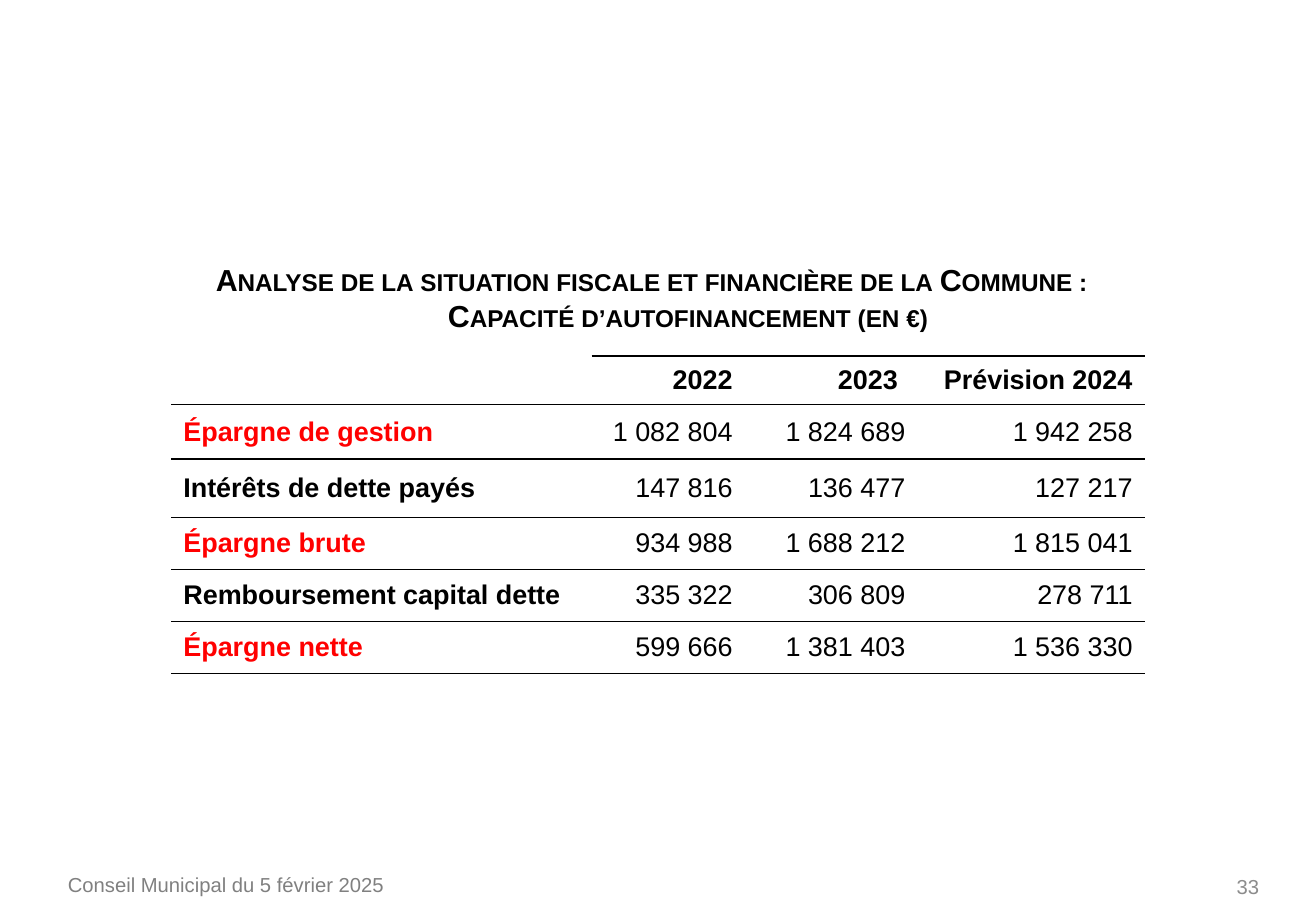
from lxml.etree import SubElement
from pptx import Presentation
from pptx.dml.color import RGBColor
from pptx.enum.text import MSO_ANCHOR, PP_ALIGN
from pptx.oxml.ns import qn
from pptx.util import Cm, Pt

BLACK = RGBColor(0x00, 0x00, 0x00)
RED = RGBColor(0xFF, 0x00, 0x00)
FOOTER_GREY = RGBColor(0x80, 0x80, 0x80)
NUMBER_GREY = RGBColor(0x8C, 0x8C, 0x8C)

TITLE_LINES = [
    "Analyse de la situation fiscale et financière de la Commune :",
    "Capacité d’autofinancement (en €)",
]
SAVINGS_ROWS = [
    ["", "2022", "2023 ", "Prévision 2024"],
    ["Épargne de gestion", "1 082 804", "1 824 689", "1 942 258"],
    ["Intérêts de dette payés", "147 816", "136 477", "127 217"],
    ["Épargne brute", "934 988", "1 688 212", "1 815 041"],
    ["Remboursement capital dette", "335 322", "306 809", "278 711"],
    ["Épargne nette", "599 666", "1 381 403", "1 536 330"],
]
COLUMN_WIDTHS = [8.79, 3.2, 3.61, 4.75]
ROW_HEIGHTS = [1.02, 1.14, 1.22, 1.09, 1.09, 1.08]


class SlideBuilder:
    """Holds the text style and the current slide."""

    font_name = "Arial"

    def __init__(self, page):
        self.page = page

    def style(self, para, size, color, bold=False, align=PP_ALIGN.LEFT):
        para.alignment = align
        para.font.name = self.font_name
        para.font.size = Pt(size)
        para.font.bold = bold
        para.font.color.rgb = color

    def title(self, lines, left, top, width, height, second_indent):
        box = self.page.shapes.title
        box.left, box.top, box.width, box.height = map(Cm, (left, top, width, height))
        frame = box.text_frame
        frame.word_wrap = True
        frame.vertical_anchor = MSO_ANCHOR.TOP
        frame.text = "\n".join(lines)
        for para in frame.paragraphs:
            self.style(para, 18, BLACK, True, PP_ALIGN.CENTER)
            properties = para._p.get_or_add_pPr()
            properties.find(qn("a:defRPr")).set("cap", "small")
        # The second line is centred in a narrower, indented measure
        properties.set("marL", str(Cm(second_indent)))
        properties.set("indent", "0")

    def text(self, words, left, top, width, height, color, align, anchor):
        box = self.page.shapes.add_textbox(Cm(left), Cm(top), Cm(width), Cm(height))
        frame = box.text_frame
        frame.word_wrap = True
        frame.vertical_anchor = anchor
        frame.text = words
        self.style(frame.paragraphs[0], 12, color, align=align)

    def border(self, cell, side, color=None):
        line = SubElement(cell._tc.get_or_add_tcPr(), qn(f"a:{side}"), w=str(Pt(1)))
        if color is None:
            SubElement(line, qn("a:noFill"))
        else:
            fill = SubElement(line, qn("a:solidFill"))
            SubElement(fill, qn("a:srgbClr"), val=str(color))

    def table(self, rows, left, top, widths, heights):
        frame = self.page.shapes.add_table(
            len(rows), len(widths), Cm(left), Cm(top), Cm(sum(widths)), Cm(sum(heights)))
        table = frame.table
        table.first_row = table.horz_banding = False
        for column, width in zip(table.columns, widths):
            column.width = Cm(width)
        for row, height in zip(table.rows, heights):
            row.height = Cm(height)
        for i, values in enumerate(rows):
            for j, value in enumerate(values):
                cell = table.cell(i, j)
                cell.text = value
                cell.vertical_anchor = MSO_ANCHOR.MIDDLE
                color = RED if j == 0 and value.startswith("Épargne") else BLACK
                align = PP_ALIGN.RIGHT if j else PP_ALIGN.LEFT
                self.style(cell.text_frame.paragraphs[0], 16, color,
                           i == 0 or j == 0, align)
                # Horizontal rules only, none above the empty corner
                self.border(cell, "lnL")
                self.border(cell, "lnR")
                self.border(cell, "lnT", BLACK if i or j else None)
                self.border(cell, "lnB", BLACK)
                cell.fill.background()


def main():
    deck = Presentation()
    deck.slide_width, deck.slide_height = Cm(27.51), Cm(19.05)
    builder = SlideBuilder(deck.slides.add_slide(deck.slide_layouts[5]))

    # Title
    builder.title(TITLE_LINES, 1.96, 5.33, 23.32, 1.83, second_indent=1.52)

    # Savings table
    builder.table(SAVINGS_ROWS, 3.58, 7.44, COLUMN_WIDTHS, ROW_HEIGHTS)

    # Footer and page number
    builder.text("Conseil Municipal du 5 février 2025", 1.17, 18.11, 11.4, 1.02,
                 FOOTER_GREY, PP_ALIGN.LEFT, MSO_ANCHOR.TOP)
    builder.text("33", 20.37, 18.03, 6.2, 1.02,
                 NUMBER_GREY, PP_ALIGN.RIGHT, MSO_ANCHOR.MIDDLE)

    deck.save("out.pptx")


if __name__ == "__main__":
    main()
